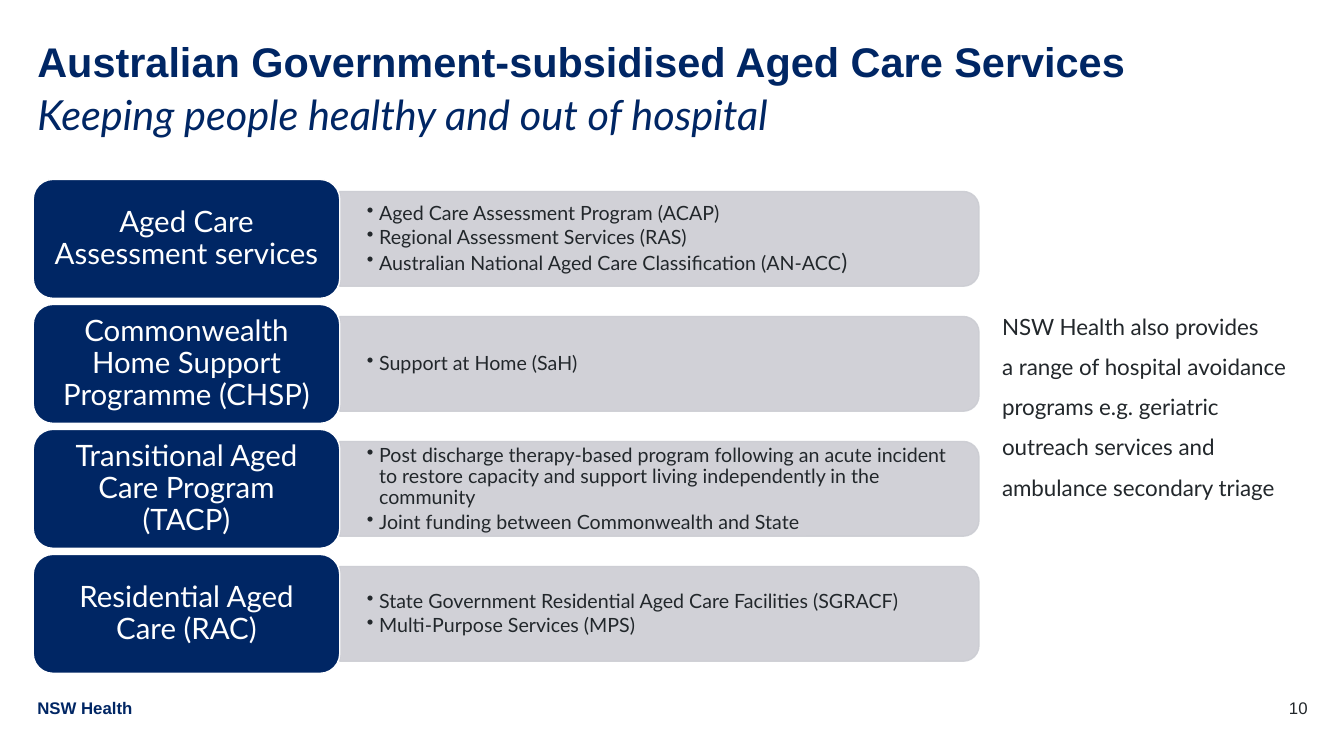
import pptx
import pptx.util
import pptx.dml.color
import pptx.enum.shapes
import pptx.enum.text
import pptx.oxml.ns
import lxml.etree

RGBColor = pptx.dml.color.RGBColor
NAVY = RGBColor(0x00, 0x26, 0x64)
GREY = RGBColor(0xCC, 0xCD, 0xD3)
INK = RGBColor(0x22, 0x27, 0x2B)
WHITE = RGBColor(0xFF, 0xFF, 0xFF)

Pt = pptx.util.Pt
SHAPE = pptx.enum.shapes.MSO_SHAPE
ALIGN = pptx.enum.text.PP_ALIGN
ANCHOR = pptx.enum.text.MSO_ANCHOR
FIT = pptx.enum.text.MSO_AUTO_SIZE

# Row layout: a label on the left, a panel of bullets on the right
TOP, PITCH = 178, 124
LEFT, LABEL_W, LABEL_H = 33, 304, 118
PANEL_W, PANEL_H = 634, 94

ROWS = [
    ("Aged Care Assessment services ",
     ["Aged Care Assessment Program (ACAP)",
      "Regional Assessment Services (RAS)",
      "Australian National Aged Care Classification (AN-ACC"]),
    ("Commonwealth Home Support Programme (CHSP)",
     ["Support at Home (SaH)"]),
    ("Transitional Aged Care Program (TACP)",
     ["Post discharge therapy-based program following an acute incident "
      "to restore capacity and support living independently in the community",
      "Joint funding between Commonwealth and State"]),
    ("Residential Aged Care (RAC)",
     ["State Government Residential Aged Care Facilities (SGRACF)",
      "Multi-Purpose Services (MPS)"]),
]


def px(n):
    """One px is a hundredth of an inch."""
    return pptx.util.Emu(n * 9144)


def write(frame, lines, size, color, font="Lato", align=ALIGN.LEFT,
          space=0.9, after=0, pad=(0, 0), anchor=ANCHOR.TOP):
    frame.word_wrap = True
    frame.auto_size = FIT.NONE
    frame.vertical_anchor = anchor
    frame.margin_left = frame.margin_right = px(pad[0])
    frame.margin_top = frame.margin_bottom = px(pad[1])
    for i, line in enumerate(lines):
        para = frame.add_paragraph() if i else frame.paragraphs[0]
        para.add_run().text = line
        para.alignment = align
        para.line_spacing = space
        para.space_before, para.space_after = Pt(0), Pt(after)
        para.font.size, para.font.name = Pt(size), font
        para.font.color.rgb = color
    return frame.paragraphs


def add_text(slide, box, lines, size, color, **style):
    frame = slide.shapes.add_textbox(*map(px, box)).text_frame
    return write(frame, lines, size, color, **style)


def add_block(slide, kind, box, fill, line):
    block = slide.shapes.add_shape(kind, *map(px, box))
    block.shadow.inherit = False
    block.fill.solid()
    block.fill.fore_color.rgb = fill
    block.line.color.rgb = line
    block.line.width = Pt(1)
    return block


def fade(shape, percent):
    for color in shape._element.spPr.iter(pptx.oxml.ns.qn("a:srgbClr")):
        alpha = lxml.etree.SubElement(color, pptx.oxml.ns.qn("a:alpha"))
        alpha.set("val", str(percent * 1000))


def add_dot(para):
    props = para._p.get_or_add_pPr()
    props.set("marL", str(px(12)))
    props.set("indent", str(px(-12)))
    dot = lxml.etree.SubElement(props, pptx.oxml.ns.qn("a:buChar"))
    dot.set("char", "•")
    # The bullet comes before the default run properties
    font = props.find(pptx.oxml.ns.qn("a:defRPr"))
    if font is not None:
        font.addprevious(dot)


def add_panel(slide, mid, items):
    left = LEFT + LABEL_W
    # A turned shape keeps its centre, so swap the sides around it
    box = (left + (PANEL_W - PANEL_H) // 2, mid - PANEL_W // 2,
           PANEL_H, PANEL_W)
    panel = add_block(slide, SHAPE.ROUND_2_SAME_RECTANGLE, box, GREY, GREY)
    panel.rotation = 90
    fade(panel, 90)
    paras = add_text(slide, (left, mid - 42, 630, 85), items, 14, INK,
                     after=2.1, pad=(27, 14), anchor=ANCHOR.MIDDLE)
    for para in paras:
        add_dot(para)
    return paras


def add_label(slide, top, text):
    label = add_block(slide, SHAPE.ROUNDED_RECTANGLE,
                      (LEFT, top, LABEL_W, LABEL_H), NAVY, WHITE)
    write(label.text_frame, [text], 21, WHITE, align=ALIGN.CENTER,
          pad=(15, 10), anchor=ANCHOR.MIDDLE)


def add_title(slide):
    title = slide.shapes.title
    title.left, title.top, title.width, title.height = map(
        px, (37, 41, 1154, 110))
    head, sub = write(title.text_frame,
                      ["Australian Government-subsidised Aged Care Services",
                       "Keeping people healthy and out of hospital"],
                      29.6, NAVY, after=6)
    head.font.name, head.font.bold = "Arial", True
    sub.font.italic = True


def main():
    deck = pptx.Presentation()
    deck.slide_width, deck.slide_height = px(1333), px(750)
    slide = deck.slides.add_slide(deck.slide_layouts[5])
    add_title(slide)

    # Service rows
    for i, (name, items) in enumerate(ROWS):
        top = TOP + i * PITCH
        paras = add_panel(slide, top + LABEL_H // 2, items)
        if i == 0:
            # The closing bracket is set larger
            end = paras[-1].add_run()
            end.text = ")"
            end.font.size = Pt(16)
        add_label(slide, top, name)

    # Side note
    add_text(slide, (984, 292, 313, 247),
             ["NSW Health also provides",
              "a range of hospital avoidance programs e.g. geriatric "
              "outreach services and ambulance secondary triage"],
             16, INK, space=1.5, pad=(10, 5))

    # Footer
    foot = add_text(slide, (37, 694, 735, 28), ["NSW Health"], 12, NAVY,
                    font="Arial")
    foot[0].font.bold = True
    add_text(slide, (1243, 694, 54, 20), ["10"], 12, INK, font="Arial",
             align=ALIGN.RIGHT)
    deck.save("out.pptx")


if __name__ == "__main__":
    main()
